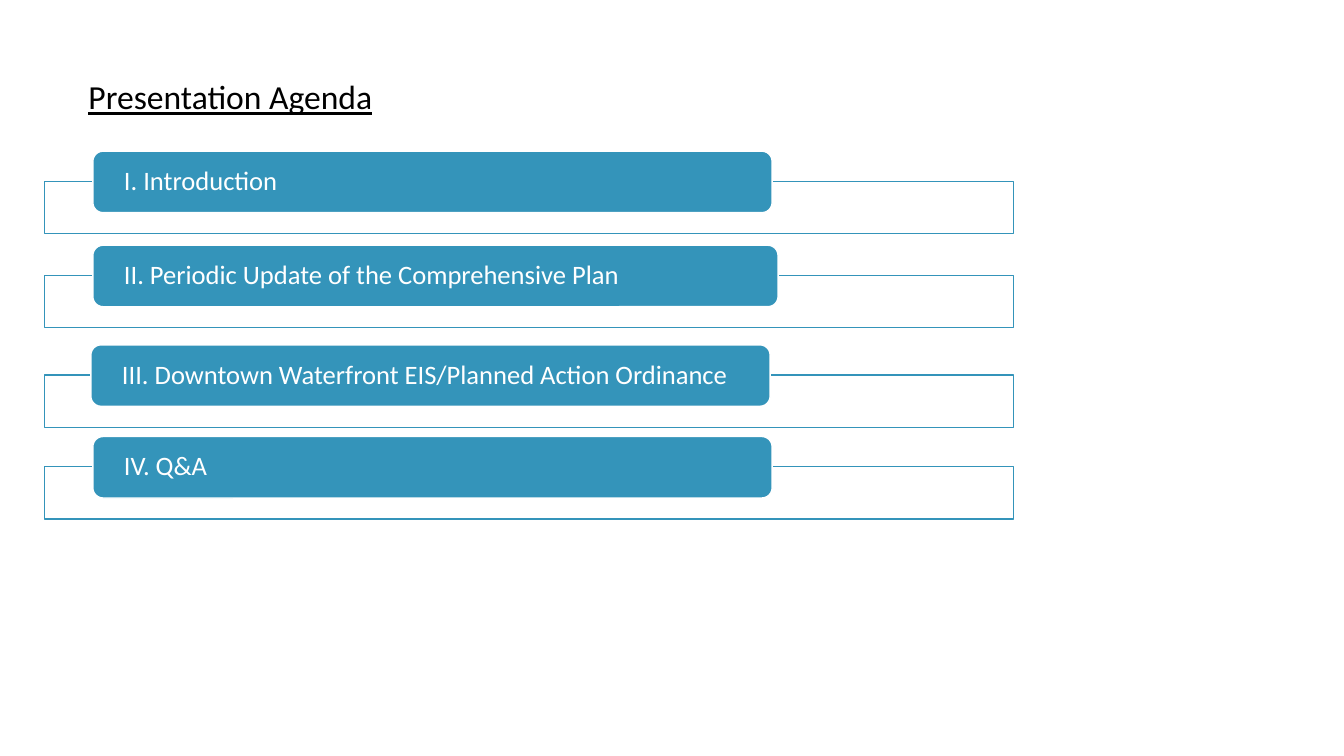
"""Build the presentation agenda slide."""
from lxml.etree import SubElement
from pptx import Presentation
from pptx.dml.color import RGBColor
from pptx.enum.shapes import MSO_SHAPE
from pptx.enum.text import MSO_ANCHOR, MSO_AUTO_SIZE, PP_ALIGN
from pptx.oxml.ns import qn
from pptx.util import Cm, Pt

TITLE = "Presentation Agenda"
# label, frame top, pill left, pill width (cm)
AGENDA = [
    ("I. Introduction", 4.57, 2.34, 17.12),
    ("II. Periodic Update of the Comprehensive Plan", 6.94, 2.34, 17.27),
    ("III. Downtown Waterfront EIS/Planned Action Ordinance", 9.45, 2.29, 17.12),
    ("IV. Q&A", 11.76, 2.34, 17.12),
]
FRAME_LEFT, FRAME_WIDTH, FRAME_HEIGHT = 1.12, 24.43, 1.32
PILL_RISE, PILL_HEIGHT, PILL_INSET = 0.76, 1.55, 0.71
FONT = "Calibri"
BLUE = RGBColor(0x34, 0x94, 0xBA)
WHITE = RGBColor(0xFF, 0xFF, 0xFF)
BLACK = RGBColor(0x00, 0x00, 0x00)


def add_box(slide, preset, left, top, width, height, fill, line):
    shape = slide.shapes.add_shape(preset, Cm(left), Cm(top), Cm(width), Cm(height))
    shape.shadow.inherit = False
    shape.fill.solid()
    shape.fill.fore_color.rgb = fill
    shape.line.color.rgb = line
    shape.line.width = Pt(1)
    return shape


def set_opacity(shape, percent):
    color = shape.fill._xPr.find(qn("a:solidFill")).find(qn("a:srgbClr"))
    SubElement(color, qn("a:alpha")).set("val", str(percent * 1000))


def style_text(paragraph, size, color):
    paragraph.alignment = PP_ALIGN.LEFT
    paragraph.font.name = FONT
    paragraph.font.size = Pt(size)
    paragraph.font.color.rgb = color


def add_agenda_item(slide, label, frame_top, pill_left, pill_width):
    frame = add_box(slide, MSO_SHAPE.RECTANGLE, FRAME_LEFT, frame_top,
                    FRAME_WIDTH, FRAME_HEIGHT, WHITE, BLUE)
    set_opacity(frame, 90)
    pill = add_box(slide, MSO_SHAPE.ROUNDED_RECTANGLE, pill_left, frame_top - PILL_RISE,
                   pill_width, PILL_HEIGHT, BLUE, WHITE)
    text_frame = pill.text_frame
    text_frame.word_wrap = True
    text_frame.vertical_anchor = MSO_ANCHOR.MIDDLE
    text_frame.margin_left = text_frame.margin_right = Cm(PILL_INSET)
    text_frame.margin_top = text_frame.margin_bottom = 0
    paragraph = text_frame.paragraphs[0]
    paragraph.text = label
    paragraph.line_spacing = 0.9
    style_text(paragraph, 19, WHITE)


def add_title(slide):
    title = slide.shapes.add_textbox(Cm(1.98), Cm(1.8), Cm(16.59), Cm(1.27))
    title.text_frame.word_wrap = True
    title.text_frame.auto_size = MSO_AUTO_SIZE.SHAPE_TO_FIT_TEXT
    paragraph = title.text_frame.paragraphs[0]
    paragraph.text = TITLE
    style_text(paragraph, 24, BLACK)
    paragraph.font.underline = True


def main():
    presentation = Presentation()
    presentation.slide_width = Cm(33.87)
    presentation.slide_height = Cm(19.05)
    slide = presentation.slides.add_slide(presentation.slide_layouts[6])
    for item in AGENDA:
        add_agenda_item(slide, *item)
    add_title(slide)
    presentation.save("out.pptx")


if __name__ == "__main__":
    main()
